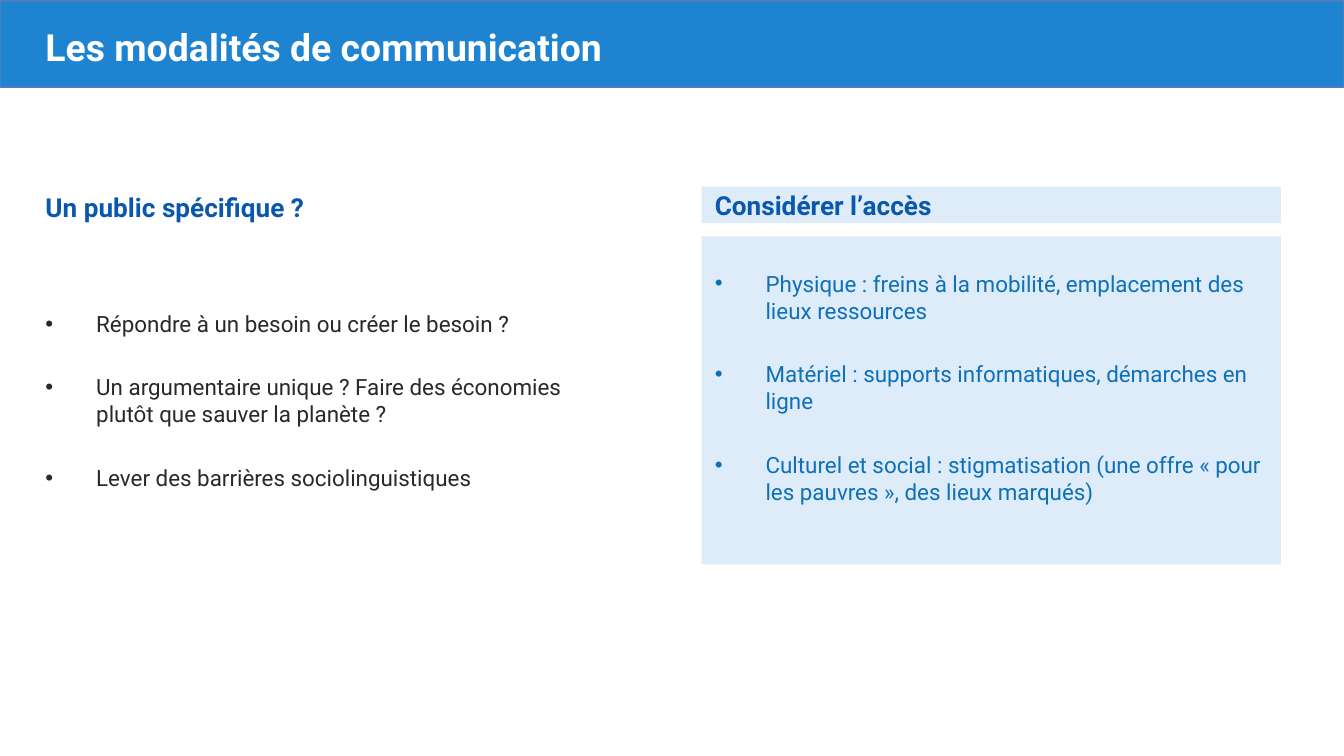
from lxml import etree
from pptx import Presentation
from pptx.dml.color import RGBColor
from pptx.enum.shapes import MSO_SHAPE
from pptx.enum.text import MSO_ANCHOR
from pptx.oxml.ns import qn
from pptx.util import Cm, Pt

RECT = MSO_SHAPE.RECTANGLE
TOP, MID = MSO_ANCHOR.TOP, MSO_ANCHOR.MIDDLE
BLUE = RGBColor(0x1E, 0x84, 0xD1)
EDGE = RGBColor(0x4B, 0x7E, 0xBC)
PALE = RGBColor(0xDD, 0xEC, 0xF8)
NAVY = RGBColor(0x0A, 0x57, 0xAE)
AZURE = RGBColor(0x0F, 0x70, 0xBA)
DARK = RGBColor(0x29, 0x29, 0x29)
WHITE = RGBColor(0xFF, 0xFF, 0xFF)

TITLE = "Les modalités de communication"
COLUMNS = [
    {"head": "Un public spécifique ?", "left": 0.61, "top": 3.56,
     "fill": None, "color": DARK, "foot": 0.13,
     "items": ["Répondre à un besoin ou créer le besoin ?",
               "Un argumentaire unique ? Faire des économies plutôt que sauver la planète ?",
               "Lever des barrières sociolinguistiques"]},
    {"head": "Considérer l’accès", "left": 13.26, "top": 3.53,
     "fill": PALE, "color": AZURE, "foot": 0.63,
     "items": ["Physique : freins à la mobilité, emplacement des lieux ressources",
               "Matériel : supports informatiques, démarches en ligne",
               "Culturel et social : stigmatisation (une offre « pour les pauvres », des lieux marqués)"]},
]
WIDTH, HEAD, BODY = 10.95, 0.69, 6.2
BODY_TOP, INDENT, GAP = 4.47, 0.96, 19.7


def add_box(slide, area, fill, line=None):
    shape = slide.shapes.add_shape(RECT, *map(Cm, area))
    shape.shadow.inherit = False
    shape.fill.solid()
    shape.fill.fore_color.rgb = fill
    if line:
        shape.line.color.rgb = line
        shape.line.width = Pt(0.75)
    else:
        shape.line.fill.background()
    return shape


def add_bullet(para):
    props = para._p.get_or_add_pPr()
    props.set("marL", str(Cm(INDENT)))
    props.set("indent", str(-Cm(INDENT)))
    etree.SubElement(props, qn("a:buFont"), typeface="Arial")
    etree.SubElement(props, qn("a:buChar"), char="•")


def add_text(slide, lines, area, size=12, color=DARK, bold=False,
             fill=None, anchor=MID, bullet=False, pad=0, foot=0):
    if fill:
        shape = add_box(slide, area, fill)
    else:
        shape = slide.shapes.add_textbox(*map(Cm, area))
    frame = shape.text_frame
    frame.word_wrap = True
    frame.vertical_anchor = anchor
    frame.margin_left = frame.margin_right = Cm(0.25)
    frame.margin_top, frame.margin_bottom = Cm(pad), Cm(foot)
    for i, line in enumerate(lines):
        para = frame.paragraphs[0] if i == 0 else frame.add_paragraph()
        para.alignment = 1
        if i:
            para.space_before = Pt(GAP)
        if bullet:
            add_bullet(para)
        run = para.add_run()
        run.text = line
        run.font.name = "Roboto"
        run.font.size = Pt(size)
        run.font.bold = bold
        run.font.color.rgb = color


def main():
    deck = Presentation()
    deck.slide_width, deck.slide_height = Cm(25.4), Cm(14.29)
    slide = deck.slides.add_slide(deck.slide_layouts[6])
    add_box(slide, (0, 0.02, 25.4, 1.63), BLUE, line=EDGE)
    add_text(slide, [TITLE], (0.61, 0.33, 24.13, 1.6), size=20, color=WHITE,
             bold=True, anchor=TOP, pad=0.13)
    for col in COLUMNS:
        left, fill = col["left"], col["fill"]
        add_text(slide, col["items"], (left, BODY_TOP, WIDTH, BODY), fill=fill,
                 color=col["color"], bullet=True, pad=0.13, foot=col["foot"])
        add_text(slide, [col["head"]], (left, col["top"], WIDTH, HEAD),
                 size=14, color=NAVY, bold=True, fill=fill)
    deck.save("out.pptx")


if __name__ == "__main__":
    main()
